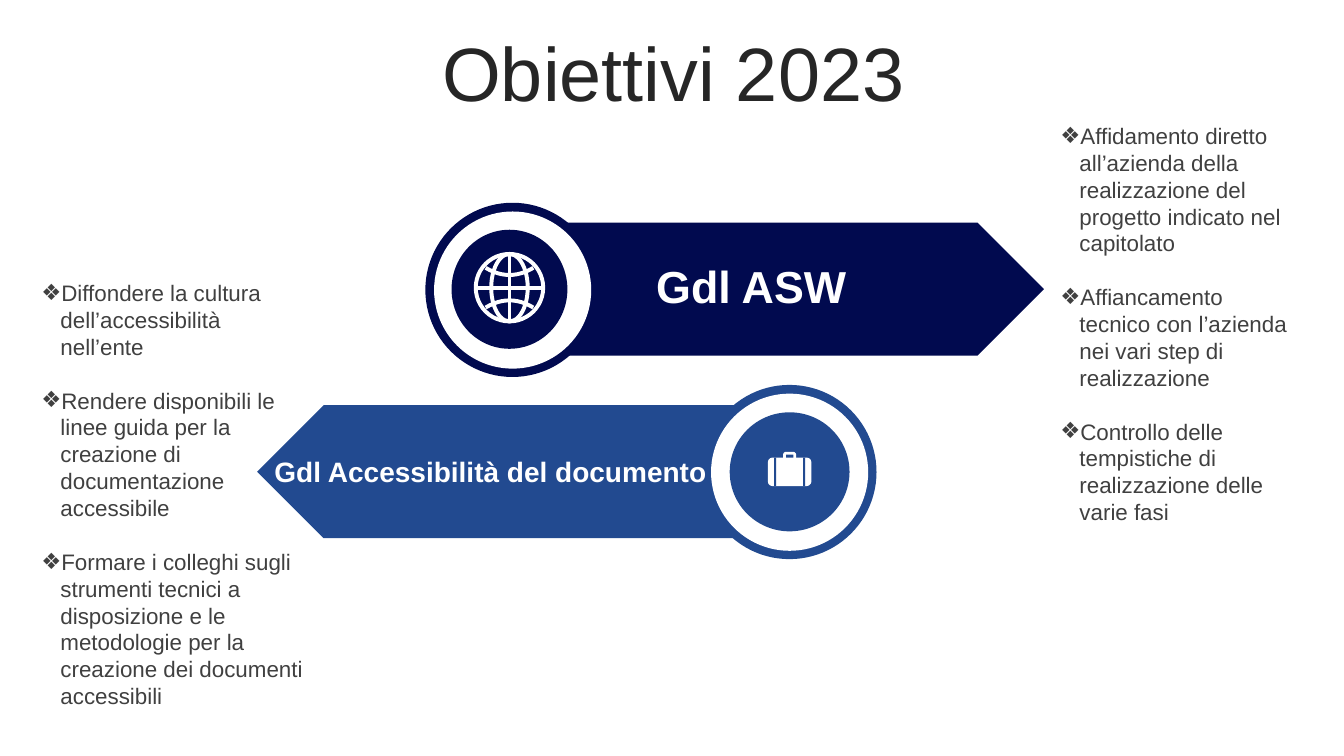
from lxml import etree
from pptx import Presentation
from pptx.dml.color import RGBColor
from pptx.enum.shapes import MSO_CONNECTOR, MSO_SHAPE
from pptx.enum.text import MSO_ANCHOR, MSO_AUTO_SIZE, PP_ALIGN
from pptx.oxml.ns import qn
from pptx.util import Cm, Pt

NAVY = RGBColor(0x01, 0x0A, 0x4F)
BLUE = RGBColor(0x22, 0x4A, 0x90)
WHITE = RGBColor(0xFF, 0xFF, 0xFF)
BLACK = RGBColor(0x26, 0x26, 0x26)
GRAY = RGBColor(0x40, 0x40, 0x40)

prs = Presentation()
prs.slide_width, prs.slide_height = Cm(33.87), Cm(19.05)
slide = prs.slides.add_slide(prs.slide_layouts[3])
shapes = slide.shapes
title, left_list, right_list = slide.placeholders


def add_plain(kind, box, fill=None, line=None):
    """Add a shadowless shape; box is left, top, width, height in cm."""
    shape = shapes.add_shape(kind, *map(Cm, box))
    shape.shadow.inherit = False
    if fill is None:
        shape.fill.background()
    else:
        shape.fill.solid()
        shape.fill.fore_color.rgb = fill
    if line is None:
        shape.line.fill.background()
    else:
        shape.line.color.rgb = WHITE
        shape.line.width = Pt(line)
    return shape


def write(holder, box, paragraphs, size, color, bullet=None, frame_format=None,
          paragraph_format=None, bold=False):
    """Place a text holder (box in cm) and fill it with formatted paragraphs."""
    holder.left, holder.top, holder.width, holder.height = map(Cm, box)
    frame = holder.text_frame
    frame.word_wrap = True
    frame.auto_size = MSO_AUTO_SIZE.NONE
    for name, value in (frame_format or {}).items():
        setattr(frame, name, value)
    for number, text in enumerate(paragraphs):
        paragraph = frame.add_paragraph() if number else frame.paragraphs[0]
        paragraph.text = text
        for name, value in (paragraph_format or {}).items():
            setattr(paragraph, name, value)
        if bullet:
            properties = paragraph._p.get_or_add_pPr()
            properties.set("marL", str(Cm(0.48)))
            properties.set("indent", str(-Cm(0.48)))
            etree.SubElement(properties, qn("a:buChar")).set("char", bullet)
        font = paragraph.runs[0].font
        for name, value in {"name": "Arial", "size": Pt(size), "bold": bold}.items():
            setattr(font, name, value)
        font.color.rgb = color
    frame.paragraphs[0].space_before = Pt(0)


write(title, (0.89, 0.94, 32.16, 2.01), ["Obiettivi 2023"], 54, BLACK,
      frame_format={"vertical_anchor": MSO_ANCHOR.MIDDLE},
      paragraph_format={"alignment": PP_ALIGN.CENTER, "line_spacing": 0.9})

goals = [
    (right_list, (26.47, 2.95, 6.3, 10.52), [
        "Affidamento diretto all’azienda della realizzazione del progetto indicato nel capitolato",
        "Affiancamento tecnico con l’azienda nei vari step di realizzazione",
        "Controllo delle tempistiche di realizzazione delle varie fasi",
    ]),
    (left_list, (0.79, 6.91, 7.14, 11.2), [
        "Diffondere la cultura dell’accessibilità nell’ente",
        "Rendere disponibili le linee guida per la creazione di documentazione accessibile",
        "Formare i colleghi sugli strumenti tecnici a disposizione e le metodologie "
        "per la creazione dei documenti accessibili",
    ]),
]
for holder, box, items in goals:
    write(holder, box, items, 16, GRAY, bullet="❖",
          frame_format={"vertical_anchor": MSO_ANCHOR.TOP},
          paragraph_format={"line_spacing": Pt(19.2), "space_before": Pt(19.2)})

# Arrow with ring and disc for each working group
groups = [
    ("Gdl ASW", 32, NAVY, 0, (12.9, 5.61), (10.72, 5.11),
     (11.38, 5.79, 2.92, 3), (15.11, 6.4, 7.65, 1.63)),
    ("Gdl Accessibilità del documento", 20, BLUE, 180, (6.48, 10.21), (17.7, 9.7),
     (18.39, 10.39, 3.02, 3), (6.55, 11.33, 11.63, 1.12)),
]
for name, size, color, turn, arrow_at, ring_at, disc, label_box in groups:
    arrow = add_plain(MSO_SHAPE.PENTAGON, (*arrow_at, 13.41, 3.35), color)
    arrow.rotation = turn
    ring_x, ring_y = ring_at
    add_plain(MSO_SHAPE.OVAL, (ring_x, ring_y, 4.39, 4.39), color)
    add_plain(MSO_SHAPE.OVAL, (ring_x + 0.22, ring_y + 0.22, 3.96, 3.96), WHITE)
    add_plain(MSO_SHAPE.OVAL, disc, color)
    label = shapes.add_textbox(0, 0, 0, 0)
    write(label, label_box, [name], size, WHITE, bold=True,
          paragraph_format={"alignment": PP_ALIGN.CENTER})

# Globe: outline, meridian, axes and two curved parallels
globe_x, globe_y, radius, stroke = 12.84, 7.25, 0.85, 2.8
for half_width in (radius, 0.46):
    add_plain(MSO_SHAPE.OVAL, (globe_x - half_width, globe_y - radius,
                               2 * half_width, 2 * radius), line=stroke)
for dx, dy in ((radius, 0), (0, radius)):
    axis = shapes.add_connector(MSO_CONNECTOR.STRAIGHT, Cm(globe_x - dx), Cm(globe_y - dy),
                                Cm(globe_x + dx), Cm(globe_y + dy))
    axis.line.color.rgb = WHITE
    axis.line.width = Pt(stroke)
    etree.SubElement(axis._element.spPr, qn("a:effectLst"))
for side in (-1, 1):
    points = [(Cm(globe_x + step / 10), Cm(globe_y + side * (0.32 + 0.005 * step ** 2)))
              for step in range(-6, 7)]
    builder = shapes.build_freeform(*points[0])
    builder.add_line_segments(points[1:], close=False)
    parallel = builder.convert_to_shape()
    parallel.shadow.inherit = False
    parallel.fill.background()
    parallel.line.color.rgb = WHITE
    parallel.line.width = Pt(stroke)

# Suitcase: handle, body and two straps
add_plain(MSO_SHAPE.ROUNDED_RECTANGLE, (19.77, 11.42, 0.26, 0.3), line=2)
add_plain(MSO_SHAPE.ROUNDED_RECTANGLE, (19.35, 11.53, 1.1, 0.72), WHITE)
for strap_x in (19.51, 20.24):
    add_plain(MSO_SHAPE.RECTANGLE, (strap_x, 11.53, 0.05, 0.72), BLUE)

prs.save("out.pptx")
